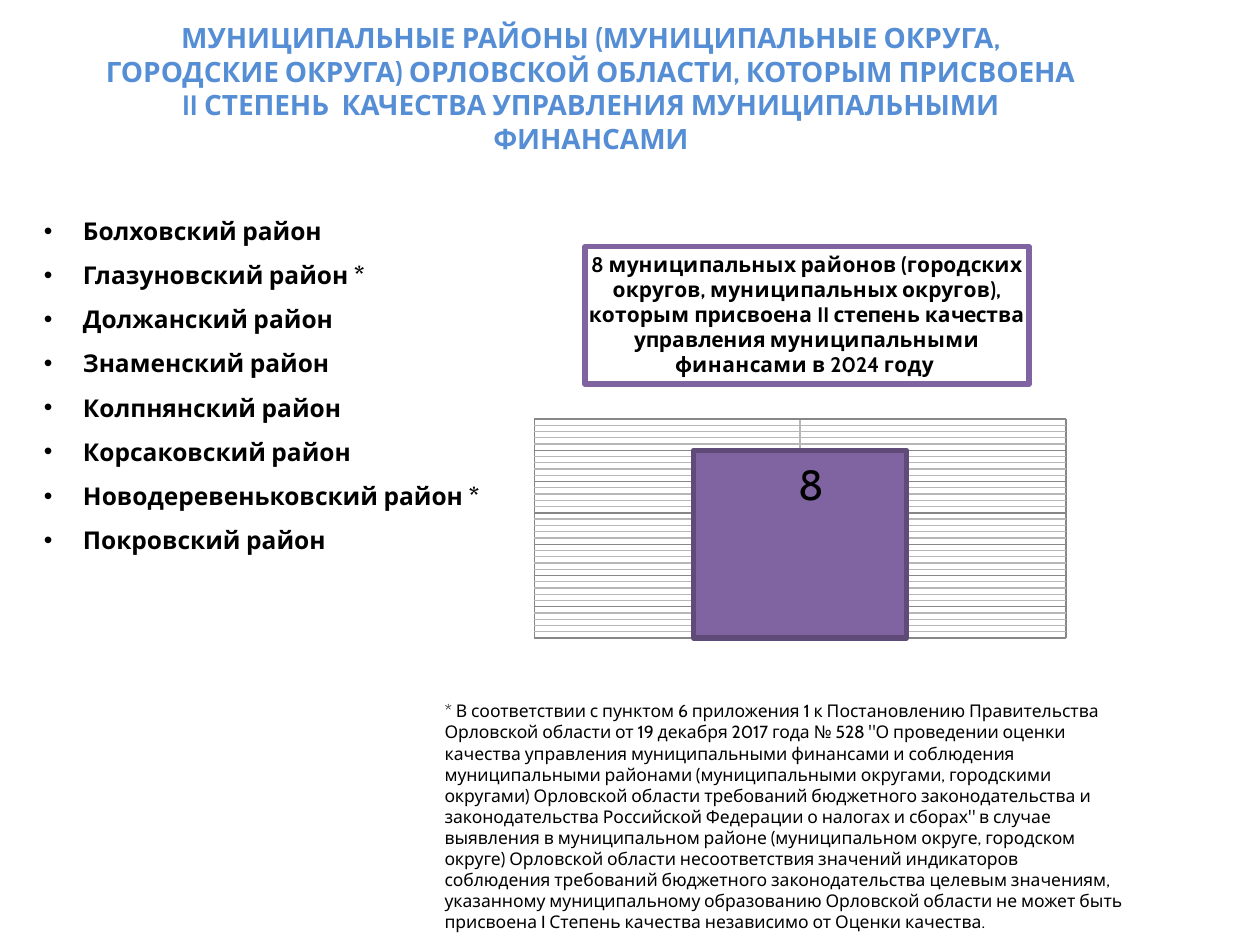
import lxml.etree
import pptx
import pptx.chart.data
import pptx.dml.color
import pptx.enum.chart
import pptx.enum.text
import pptx.oxml.ns
import pptx.util

Inches = pptx.util.Inches
Pt = pptx.util.Pt
qn = pptx.oxml.ns.qn

COLORS = {"title": "558ED5", "text": "000000", "bar": "8064A2", "edge": "5F4A78", "paper": "FFFFFF"}

HEADING = (
    "МУНИЦИПАЛЬНЫЕ РАЙОНЫ (МУНИЦИПАЛЬНЫЕ ОКРУГА, ГОРОДСКИЕ ОКРУГА) ОРЛОВСКОЙ ОБЛАСТИ, "
    "КОТОРЫМ ПРИСВОЕНА II СТЕПЕНЬ  КАЧЕСТВА УПРАВЛЕНИЯ МУНИЦИПАЛЬНЫМИ ФИНАНСАМИ"
)
DISTRICTS = [
    "Болховский район",
    "Глазуновский район *",
    "Должанский район",
    "Знаменский район",
    "Колпнянский район",
    "Корсаковский район",
    "Новодеревеньковский район *",
    "Покровский район",
]
FOOTNOTE = (
    "* В соответствии с пунктом 6 приложения 1 к Постановлению Правительства Орловской области "
    "от 19 декабря 2017 года № 528 \"О проведении оценки качества управления муниципальными "
    "финансами и соблюдения муниципальными районами (муниципальными округами, городскими "
    "округами) Орловской области требований бюджетного законодательства и законодательства "
    "Российской Федерации о налогах и сборах\" в случае выявления в муниципальном районе "
    "(муниципальном округе, городском округе) Орловской области несоответствия значений "
    "индикаторов соблюдения требований бюджетного законодательства целевым значениям, "
    "указанному муниципальному образованию Орловской области не может быть присвоена "
    "I Степень качества независимо от Оценки качества."
)
CHART_TITLE = (
    "8 муниципальных районов (городских округов, муниципальных округов), которым присвоена "
    "II степень качества управления муниципальными финансами в 2024 году "
)
CHART_15 = "http://schemas.microsoft.com/office/drawing/2012/chart"
LABEL_EXTENSION = "{CE6537A1-D6FC-4f65-9D91-7224C49458BB}"


class SlideBuilder:
    """Holds the style and the current slide and adds its elements."""

    def __init__(self, slide, font_name="Cabin"):
        self.slide = slide
        self.font_name = font_name

    def style_font(self, font, size, color="text", bold=False):
        font.name = self.font_name
        font.size = Pt(size)
        font.bold = bold
        font.color.rgb = pptx.dml.color.RGBColor.from_string(COLORS[color])

    def style_shape(self, shape_format, fill, line, width):
        shape_format.fill.solid()
        shape_format.fill.fore_color.rgb = pptx.dml.color.RGBColor.from_string(COLORS[fill])
        shape_format.line.color.rgb = pptx.dml.color.RGBColor.from_string(COLORS[line])
        shape_format.line.width = Pt(width)

    def add_text(self, box, lines, size, color="text", bold=False):
        shape = self.slide.shapes.add_textbox(*map(Inches, box))
        text_frame = shape.text_frame
        text_frame.word_wrap = True
        text_frame.text = "\n".join(lines)
        for paragraph in text_frame.paragraphs:
            for run in paragraph.runs:
                self.style_font(run.font, size, color, bold)
        return text_frame

    def add_heading(self, box, text):
        text_frame = self.add_text(box, [text], 16, "title", True)
        text_frame.vertical_anchor = pptx.enum.text.MSO_ANCHOR.BOTTOM
        text_frame.margin_left = text_frame.margin_right = Inches(0.05)
        text_frame.margin_top = text_frame.margin_bottom = 0
        text_frame.paragraphs[0].alignment = pptx.enum.text.PP_ALIGN.CENTER

    def add_bullets(self, box, lines):
        indent = Inches(0.31)
        for paragraph in self.add_text(box, lines, 14, bold=True).paragraphs:
            paragraph.line_spacing = 1.5
            properties = paragraph._p.get_or_add_pPr()
            properties.set("marL", str(indent))
            properties.set("indent", str(-indent))
            lxml.etree.SubElement(properties, qn("a:buFont"), typeface="Arial")
            lxml.etree.SubElement(properties, qn("a:buChar"), char="•")

    def place(self, element, index, **settings):
        for layout in element.findall(qn("c:layout")):
            element.remove(layout)
        layout = lxml.etree.Element(qn("c:layout"))
        manual = lxml.etree.SubElement(layout, qn("c:manualLayout"))
        for name, value in settings.items():
            lxml.etree.SubElement(manual, qn("c:" + name), val=str(value))
        element.insert(index, layout)

    def hide_leader_lines(self, labels):
        for leader in labels.findall(qn("c:showLeaderLines")):
            leader.set("val", "0")
        extensions = lxml.etree.SubElement(labels, qn("c:extLst"))
        extension = lxml.etree.SubElement(extensions, qn("c:ext"), uri=LABEL_EXTENSION)
        lxml.etree.SubElement(
            extension, "{%s}showLeaderLines" % CHART_15, nsmap={"c15": CHART_15}, val="0"
        )

    def add_column_chart(self, box, title, value, label):
        data = pptx.chart.data.CategoryChartData()
        data.categories = ["1"]
        data.add_series("Series 1", [value])
        chart_type = pptx.enum.chart.XL_CHART_TYPE.COLUMN_CLUSTERED
        chart = self.slide.shapes.add_chart(chart_type, *map(Inches, box), data).chart
        self.style_font(chart.font, 18)
        chart.has_legend = False

        chart.has_title = True
        title_frame = chart.chart_title.text_frame
        title_frame.text = title
        self.style_font(title_frame.paragraphs[0].runs[0].font, 12, bold=True)
        self.style_shape(chart.chart_title.format, "paper", "bar", 3)

        for axis in (chart.category_axis, chart.value_axis):
            axis.has_major_gridlines = axis.has_minor_gridlines = True
            axis.visible = False
        chart.value_axis.minimum_scale = 0
        chart.value_axis.maximum_scale = 14
        chart.value_axis.major_unit = 2
        chart.value_axis.minor_unit = 0.4

        plot = chart.plots[0]
        plot.gap_width = 150
        plot.vary_by_categories = False
        series = plot.series[0]
        self.style_shape(series.format, "bar", "edge", 3.15)
        series.data_labels.show_value = True
        data_label = series.points[0].data_label
        data_label.text_frame.text = label
        self.style_font(data_label.text_frame.paragraphs[0].runs[0].font, 24)
        data_label.position = pptx.enum.chart.XL_LABEL_POSITION.INSIDE_END

        root = chart.element
        self.hide_leader_lines(root.find(".//" + qn("c:dLbls")))
        self.place(root.find(".//" + qn("c:title")), 1, xMode="edge", yMode="edge", x=0.13, y=0.11)
        self.place(root.find(".//" + qn("c:dLbl")), 1, x=0.02, y=0.01)
        self.place(
            root.find(".//" + qn("c:plotArea")), 0,
            layoutTarget="inner", xMode="edge", yMode="edge", x=0.04, y=0.48, w=0.94, h=0.47,
        )


def main():
    presentation = pptx.Presentation()
    presentation.slide_width = Inches(10)
    presentation.slide_height = Inches(7.5)
    builder = SlideBuilder(presentation.slides.add_slide(presentation.slide_layouts[6]))
    builder.add_heading((0.73, 0.13, 7.92, 1.1), HEADING)
    builder.add_bullets((0.25, 1.55, 4.44, 4.75), DISTRICTS)
    builder.add_text((3.43, 5.51, 5.6, 1.95), [FOOTNOTE], 10)
    builder.add_column_chart((4.06, 1.55, 4.49, 3.7), CHART_TITLE, 12, "8")
    presentation.save("out.pptx")


if __name__ == "__main__":
    main()
